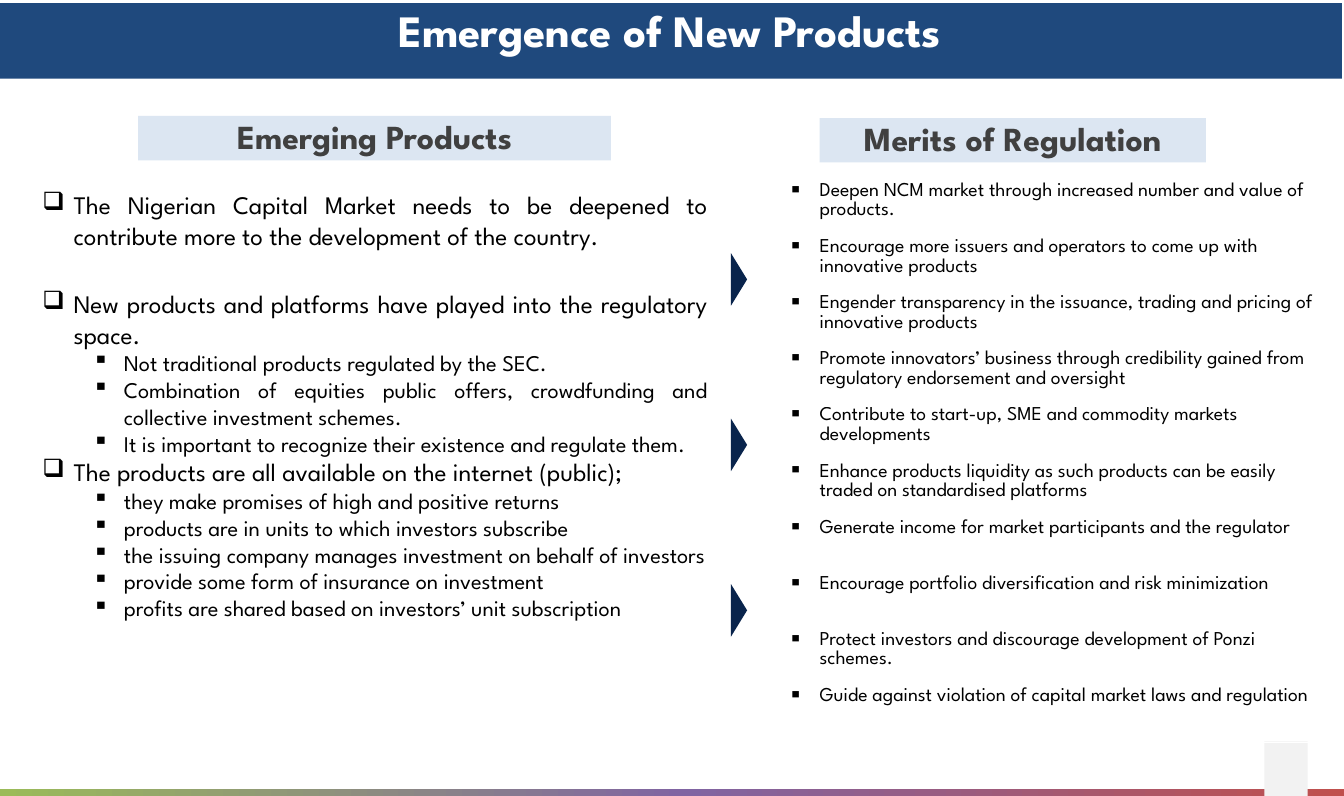
from copy import deepcopy

from lxml import etree
from pptx import Presentation
from pptx.dml.color import RGBColor
from pptx.enum.shapes import MSO_SHAPE
from pptx.enum.text import MSO_ANCHOR, PP_ALIGN
from pptx.oxml.ns import qn
from pptx.util import Pt

RECT, TRIANGLE = MSO_SHAPE.RECTANGLE, MSO_SHAPE.ISOSCELES_TRIANGLE
TOP = MSO_ANCHOR.TOP
LEFT, CENTER, JUSTIFY = PP_ALIGN.LEFT, PP_ALIGN.CENTER, PP_ALIGN.JUSTIFY

BLACK = RGBColor(0x00, 0x00, 0x00)
WHITE = RGBColor(0xFF, 0xFF, 0xFF)
GRAY = RGBColor(0x40, 0x40, 0x40)
PALE_GRAY = RGBColor(0xF2, 0xF2, 0xF2)
BLUE = RGBColor(0x1F, 0x49, 0x7D)
PALE_BLUE = RGBColor(0xDC, 0xE6, 0xF2)
NAVY = RGBColor(0x09, 0x24, 0x4C)
GREEN = RGBColor(0x9B, 0xBB, 0x59)
PURPLE = RGBColor(0x80, 0x64, 0xA2)
RED = RGBColor(0xC0, 0x50, 0x4D)

FONT = "League Spartan"
EMU_PER_PX = 9144
HANG = 31

NEED = ["The Nigerian Capital Market needs to be deepened to contribute more "
        "to the development of the country."]
PRODUCTS = [
    ("New products and platforms have played into the regulatory space.", [
        "Not traditional products regulated by the SEC.",
        "Combination of equities public offers, crowdfunding and collective "
        "investment schemes.",
        "It is important to recognize their existence and regulate them.",
    ]),
    ("The products are all available on the internet (public);", [
        "they make promises of high and positive returns",
        "products are in units to which investors subscribe",
        "the issuing company manages investment on behalf of investors",
        "provide some form of insurance on investment",
        "profits are shared based on investors’ unit subscription",
    ]),
]
MERITS = [
    "Deepen NCM market through increased number and value of products.",
    "Encourage more issuers and operators to come up with innovative products",
    "Engender transparency in the issuance, trading and pricing of innovative products",
    "Promote innovators’ business through credibility gained from regulatory "
    "endorsement and oversight",
    "Contribute to start-up, SME and commodity markets developments",
    "Enhance products liquidity as such products can be easily traded on "
    "standardised platforms",
    "Generate income for market participants and the regulator",
    "Encourage portfolio diversification and risk minimization",
    "Protect investors and discourage development of Ponzi schemes.",
    "Guide against violation of capital market laws and regulation",
]


def px(n):
    return round(n * EMU_PER_PX)


def write(p, text, size=18, color=BLACK, bold=False, align=LEFT,
          bullet=None, level=0, indent=HANG, spacing=None):
    p.alignment = align
    p.level = level
    if spacing:
        p.line_spacing = spacing
    if bullet:
        pPr = p._p.get_or_add_pPr()
        pPr.set("marL", str(px(indent)))
        pPr.set("indent", str(px(-HANG)))
        etree.SubElement(pPr, qn("a:buChar")).set("char", bullet)
    r = p.add_run()
    r.text = text
    r.font.name, r.font.size, r.font.bold = FONT, Pt(size), bold
    r.font.color.rgb = color


class Deck:
    """Draws elements on the current slide in one style."""

    def __init__(self, width, height):
        self.prs = Presentation()
        self.prs.slide_width, self.prs.slide_height = px(width), px(height)
        self.slide = self.prs.slides.add_slide(self.prs.slide_layouts[6])

    def frame(self, sp, bottom):
        tf = sp.text_frame
        tf.word_wrap, tf.vertical_anchor = True, TOP
        tf.margin_left = tf.margin_right = tf.margin_top = 0
        tf.margin_bottom = px(bottom)
        return tf

    def shape(self, kind, box, fill=None, rotation=0):
        sp = self.slide.shapes.add_shape(kind, *map(px, box))
        sp.shadow.inherit = False
        sp.line.fill.background()
        sp.rotation = rotation
        if fill is not None:
            sp.fill.solid()
            sp.fill.fore_color.rgb = fill
        return sp

    def gradient_bar(self, box, stops):
        sp = self.shape(RECT, box)
        sp.fill.gradient()
        sp.fill.gradient_angle = 0
        gs_list = sp._element.spPr.find(".//" + qn("a:gsLst"))
        while len(gs_list) < len(stops):
            gs_list.append(deepcopy(gs_list[0]))
        for stop, (position, color) in zip(sp.fill.gradient_stops, stops):
            stop.position, stop.color.rgb = position, color

    def banner(self, box, text, fill, bottom=4, **fmt):
        tf = self.frame(self.shape(RECT, box, fill), bottom)
        write(tf.paragraphs[0], text, bold=True, align=CENTER, **fmt)

    def outline(self, box, items):
        tf = self.frame(self.slide.shapes.add_textbox(*map(px, box)), 4)
        p = tf.paragraphs[0]
        for i, (head, points) in enumerate(items):
            if i:
                p = tf.add_paragraph()
            write(p, head, align=JUSTIFY, bullet="❑")
            for point in points:
                write(tf.add_paragraph(), point, size=16, align=JUSTIFY,
                      bullet="▪", level=1, indent=81)

    def bullet_table(self, x, y, width, row_height, rows):
        box = x, y, width, row_height * len(rows)
        table = self.slide.shapes.add_table(len(rows), 1, *map(px, box)).table
        table.first_row = table.horz_banding = False
        for i, text in enumerate(rows):
            table.rows[i].height = px(row_height)
            cell = table.cell(i, 0)
            cell.fill.background()
            cell.margin_left = cell.margin_right = px(7)
            cell.margin_top = cell.margin_bottom = 0
            write(cell.text_frame.paragraphs[0], text, size=14, bullet="▪",
                  spacing=1.07)


def main():
    deck = Deck(1333, 789)
    deck.gradient_bar((0, 782, 1333, 8), [(0, GREEN), (0.51, PURPLE), (1, RED)])
    deck.shape(RECT, (1254, 735, 43, 54), PALE_GRAY)
    deck.outline((42, 188, 660, 95), [(text, []) for text in NEED])
    deck.outline((42, 286, 660, 452), PRODUCTS)
    for i in range(3):
        deck.shape(TRIANGLE, (707, 269 + 164 * i, 52, 16), NAVY, rotation=90)
    deck.banner((137, 115, 469, 44), "Emerging Products", PALE_BLUE,
                size=24, color=GRAY)
    deck.banner((813, 117, 383, 44), "Merits of Regulation", PALE_BLUE,
                size=24, color=GRAY)
    deck.banner((-2, 3, 1333, 75), "Emergence of New Products", BLUE,
                bottom=0, size=32, color=WHITE)
    deck.bullet_table(775, 180, 540, 55.6, MERITS)
    deck.prs.save("out.pptx")


if __name__ == "__main__":
    main()
